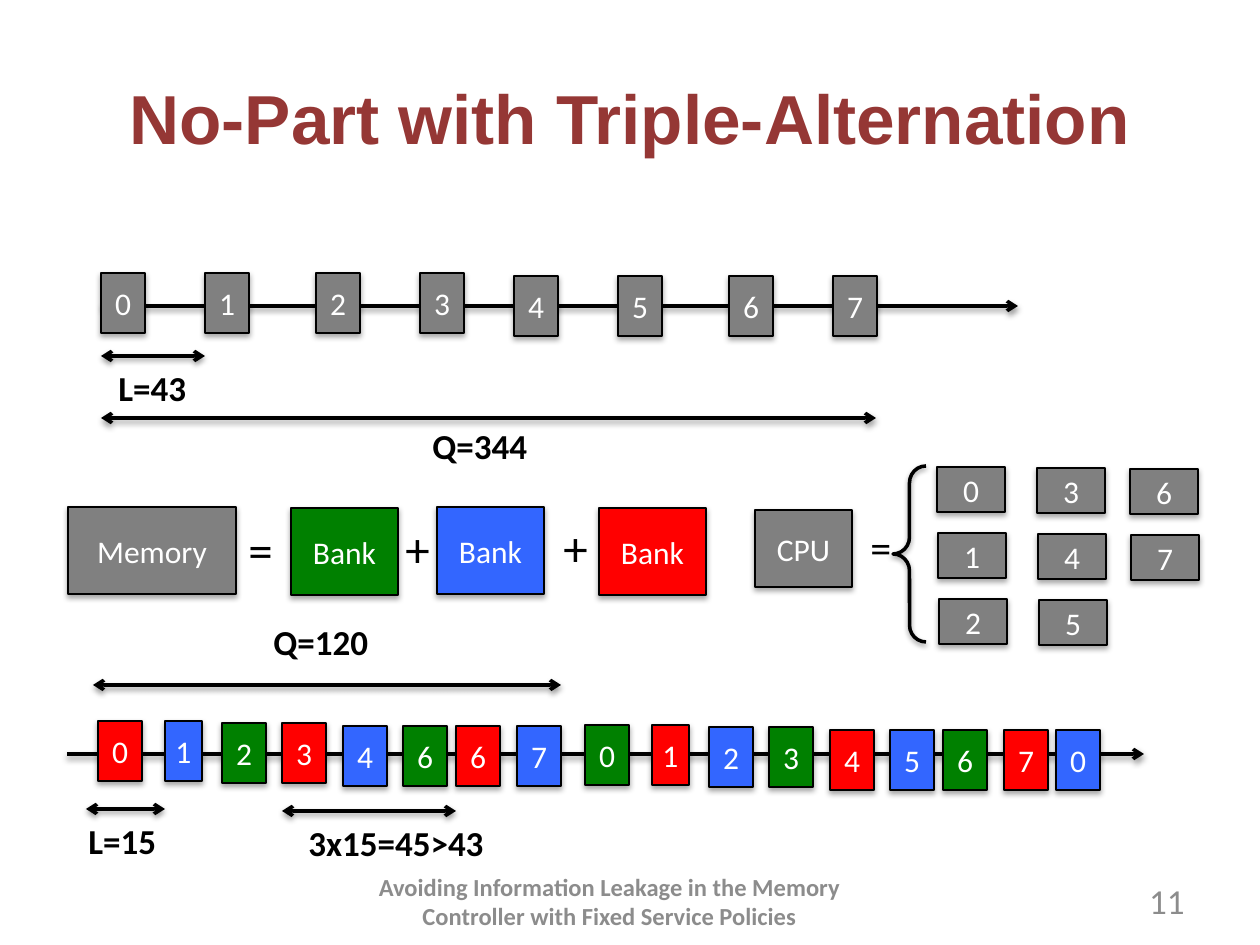
from itertools import cycle

from lxml.etree import SubElement
from pptx import Presentation
from pptx.dml.color import RGBColor
from pptx.enum.shapes import MSO_CONNECTOR as CONN, MSO_SHAPE as SHAPE
from pptx.enum.text import MSO_ANCHOR as ANCHOR, MSO_AUTO_SIZE as AUTO, PP_ALIGN as ALIGN
from pptx.oxml.ns import qn
from pptx.util import Emu, Pt

GRAY, RED, BLUE, GREEN = "808080", "FF0000", "3366FF", "008000"
BLACK, WHITE, MUTED = "000000", "FFFFFF", "8C8C8C"


def px(n):
    """Turn pixels into EMU."""
    return Emu(round(n * 914400 / 126))


def rgb(color):
    """Turn a hex string into a colour."""
    return RGBColor.from_string(color)


def add_shadow(sp, dist, alpha):
    """Give a shape or connector a soft shadow straight below it."""
    effects = SubElement(sp._element.spPr, qn("a:effectLst"))
    outer = SubElement(effects, qn("a:outerShdw"), blurRad="40000", dist=str(dist),
                       dir="5400000", rotWithShape="0")
    color = SubElement(outer, qn("a:srgbClr"), val=BLACK)
    SubElement(color, qn("a:alpha"), val=str(alpha * 1000))


def write(tf, text, size, color, bold=False, align=ALIGN.CENTER, font="Calibri"):
    """Write one formatted run into the first paragraph of a frame."""
    p = tf.paragraphs[0]
    p.alignment = align
    r = p.add_run()
    r.text = text
    r.font.name, r.font.size, r.font.bold = font, Pt(size), bold
    r.font.color.rgb = rgb(color)


def add_block(s, x, y, w, h, text, fill):
    """Add a filled rectangle with a centred white label."""
    sp = s.shapes.add_shape(SHAPE.RECTANGLE, px(x), px(y), px(w), px(h))
    sp.fill.solid()
    sp.fill.fore_color.rgb = rgb(fill)
    sp.line.color.rgb = rgb(BLACK)
    sp.line.width = Pt(0.75)
    add_shadow(sp, 23000, 35)
    tf = sp.text_frame
    tf.margin_left = tf.margin_right = 0
    tf.vertical_anchor = ANCHOR.MIDDLE
    write(tf, text, 18, WHITE)


def add_arrow(s, x1, x2, y, both=True):
    """Add a horizontal arrow, with a head at one end or both."""
    line = s.shapes.add_connector(CONN.STRAIGHT, px(x1), px(y), px(x2), px(y))
    line.line.color.rgb = rgb(BLACK)
    line.line.width = Pt(2)
    ln = line.line._get_or_add_ln()
    for end in ("a:headEnd", "a:tailEnd") if both else ("a:tailEnd",):
        SubElement(ln, qn(end), type="arrow")
    add_shadow(line, 20000, 38)


def add_label(s, x, y, w, h, text, size=20, bold=True):
    """Add a short black label that does not wrap."""
    tf = s.shapes.add_textbox(px(x), px(y), px(w), px(h)).text_frame
    tf.word_wrap = False
    tf.auto_size = AUTO.SHAPE_TO_FIT_TEXT
    write(tf, text, size, BLACK, bold, ALIGN.LEFT)


def add_title(s, x, y, w, h):
    """Place and fill the title placeholder."""
    title = s.shapes.title
    title.left, title.top, title.width, title.height = px(x), px(y), px(w), px(h)
    title.text_frame.vertical_anchor = ANCHOR.MIDDLE
    write(title.text_frame, "No-Part with Triple-Alternation", 39.6, "953735", True,
          font="Arial")


def add_plain_timeline(s, x, y):
    """Draw the timeline of eight gray slots and its two spans."""
    add_arrow(s, x, x + 917, y + 33, both=False)
    for n in range(8):
        half, i = divmod(n, 4)
        add_block(s, x + 413 * half + (0, 104, 215, 319)[i], y + 3 * half, 44, 60,
                  str(n), GRAY)
    add_arrow(s, x, x + 104, y + 83)
    add_label(s, x + 5, y + 87, 93, 55, "L=43")
    add_arrow(s, x, x + 775, y + 145)
    add_label(s, x + 319, y + 145, 121, 55, "Q=344")


def add_banks(s, x, y):
    """Draw memory as the sum of three banks."""
    add_block(s, x, y, 168, 87, "Memory", GRAY)
    for dx, dy, fill in ((223, 1, GREEN), (369, 0, BLUE), (531, 1, RED)):
        add_block(s, x + dx, y + dy, 107, 87, "Bank", fill)
    for dx, dy, sign in ((168, 6, "="), (325, 5, "+"), (483, 4, "+")):
        add_label(s, x + dx, y + dy, 50, 72, sign, 28, False)


def add_cpu(s, x, y):
    """Draw the CPU, a brace and the grid of its eight threads."""
    add_block(s, x, y + 44, 97, 77, "CPU", GRAY)
    add_label(s, x + 103, y + 49, 47, 63, "=", 24, False)
    brace = s.shapes.add_shape(SHAPE.LEFT_BRACE, px(x + 138), px(y), px(33), px(176))
    brace.adjustments[0], brace.adjustments[1] = 0.51, 0.5
    brace.fill.background()
    brace.line.color.rgb = rgb(BLACK)
    brace.line.width = Pt(2)
    add_shadow(brace, 20000, 38)
    for n in range(8):
        col, row = divmod(n, 3)
        add_block(s, x + 182 + (0, 100, 193)[col] + row, y + 1 + 66 * row + col, 68, 45,
                  str(n), GRAY)


def add_colored_timeline(s, x, y):
    """Draw the timeline whose slots alternate over three banks, with its spans."""
    add_arrow(s, x, x + 1077, y + 140, both=False)
    offsets = (0, 67, 124, 184, 245, 305, 358, 419)
    drops = (0, 0, 2, 2, 5, 5, 5, 5)
    for n, (text, fill) in enumerate(zip("01234667012345670", cycle((RED, BLUE, GREEN)))):
        turn, i = divmod(n, 8)
        add_block(s, x + 31 + (0, 487, 958)[turn] + offsets[i],
                  y + 107 + (0, 4, 9)[turn] + drops[i], 37 if i == 1 else 44, 60,
                  text, fill)
    add_label(s, x + 194, y, 121, 55, "Q=120")
    add_arrow(s, x + 26, x + 494, y + 71)
    add_arrow(s, x + 19, x + 98, y + 195)
    add_label(s, x + 9, y + 199, 93, 55, "L=15")
    add_arrow(s, x + 215, x + 389, y + 197)
    add_label(s, x + 229, y + 201, 203, 55, "3x15=45>43")


def add_footer(s, x, y, w, h, text, size, bold, align):
    """Add a muted line of text at the foot of the slide."""
    tf = s.shapes.add_textbox(px(x), px(y), px(w), px(h)).text_frame
    tf.word_wrap = True
    tf.vertical_anchor = ANCHOR.MIDDLE
    write(tf, text, size, MUTED, bold, align)


def main():
    """Build the slide and save it."""
    prs = Presentation()
    prs.slide_width, prs.slide_height = px(1260), px(945)
    s = prs.slides.add_slide(prs.slide_layouts[5])
    add_title(s, 63, 38, 1134, 157)
    add_plain_timeline(s, 101, 273)
    add_banks(s, 68, 507)
    add_cpu(s, 755, 466)
    add_colored_timeline(s, 67, 614)
    add_footer(s, 360, 876, 499, 50, "Avoiding Information Leakage in the Memory "
               "Controller with Fixed Service Policies", 14, True, ALIGN.CENTER)
    add_footer(s, 903, 876, 294, 50, "11", 20, False, ALIGN.RIGHT)
    prs.save("out.pptx")


if __name__ == "__main__":
    main()
